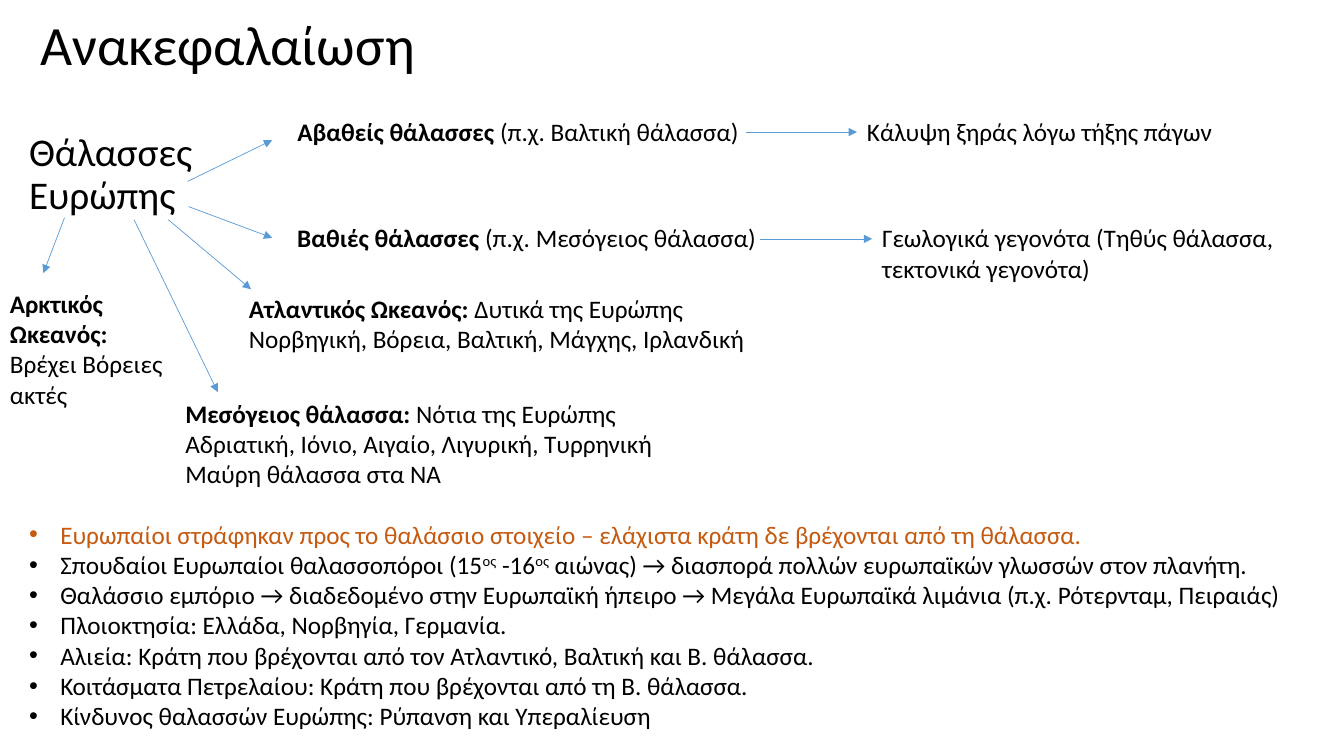
from lxml import etree
from pptx import Presentation
from pptx import util as u
from pptx.dml.color import RGBColor
from pptx.enum import shapes, text
from pptx.oxml import ns

COLORS = {"text": "000000", "accent": "C55A11", "arrow": "5B9BD5"}
FONT = "Calibri"
BULLET_INDENT = 0.31
BOLD = {"bold": True}
SUPERSCRIPT = {"baseline": 30000}
ACCENT = {"color": "accent"}

# Each label: left, top, width, height, paragraphs of (text, format) runs
LABELS = [
    (2.85, 1.1, 4.68, 0.4, [[("Αβαθείς θάλασσες ", BOLD), ("(π.χ. Βαλτική θάλασσα)", {})]]),
    (2.85, 2.16, 5.17, 0.4, [[("Βαθιές θάλασσες ", BOLD), ("(π.χ. Μεσόγειος θάλασσα)", {})]]),
    (8.5, 1.1, 4.18, 0.4, [[("Κάλυψη ξηράς λόγω τήξης πάγων", {})]]),
    (8.65, 2.16, 4.18, 0.71, [[("Γεωλογικά γεγονότα (Τηθύς θάλασσα, τεκτονικά γεγονότα)", {})]]),
    (0, 2.81, 1.86, 1.31, [[("Αρκτικός Ωκεανός: ", BOLD), ("Βρέχει Βόρειες ακτές", {})]]),
    (2.37, 2.86, 5.17, 0.71, [
        [("Ατλαντικός Ωκεανός:", BOLD), (" Δυτικά της Ευρώπης", {})],
        [("Νορβηγική, Βόρεια, Βαλτική, Μάγχης, Ιρλανδική", {})],
    ]),
    (1.74, 3.9, 5.17, 1.01, [
        [("Μεσόγειος θάλασσα:", BOLD), (" Νότια της Ευρώπης", {})],
        [("Αδριατική, Ιόνιο, Αιγαίο, Λιγυρική, Τυρρηνική", {})],
        [("Μαύρη θάλασσα στα ΝΑ", {})],
    ]),
]

# Each arrow: start x, start y, end x, end y
ARROWS = [
    (1.86, 1.8, 2.7, 1.39),
    (1.87, 2.05, 2.7, 2.36),
    (7.4, 1.31, 8.5, 1.31),
    (7.54, 2.37, 8.65, 2.37),
    (0.64, 2.16, 0.43, 2.71),
    (1.67, 2.18, 2.49, 2.87),
    (1.33, 2.18, 2.16, 3.89),
]

SUMMARY = [
    [("Ευρωπαίοι στράφηκαν προς το θαλάσσιο στοιχείο – ελάχιστα κράτη δε βρέχονται "
      "από τη θάλασσα.", ACCENT)],
    [("Σπουδαίοι Ευρωπαίοι θαλασσοπόροι (15", {}), ("ος", SUPERSCRIPT), (" -16", {}),
     ("ος", SUPERSCRIPT),
     (" αιώνας) → διασπορά πολλών ευρωπαϊκών γλωσσών στον πλανήτη.", {})],
    [("Θαλάσσιο εμπόριο → διαδεδομένο στην Ευρωπαϊκή ήπειρο → Μεγάλα Ευρωπαϊκά λιμάνια "
      "(π.χ. Ρότερνταμ, Πειραιάς)", {})],
    [("Πλοιοκτησία: Ελλάδα, Νορβηγία, Γερμανία.", {})],
    [("Αλιεία: Κράτη που βρέχονται από τον Ατλαντικό, Βαλτική και Β. θάλασσα.", {})],
    [("Κοιτάσματα Πετρελαίου: Κράτη που βρέχονται από τη Β. θάλασσα.", {})],
    [("Κίνδυνος θαλασσών Ευρώπης: Ρύπανση και Υπεραλίευση", {})],
]


def add_run(paragraph, words, size, formats):
    run = paragraph.add_run()
    run.text = words
    values = {"name": FONT, "size": u.Pt(size), "bold": formats.get("bold", False)}
    for name, value in values.items():
        setattr(run.font, name, value)
    run.font.color.rgb = RGBColor.from_string(COLORS[formats.get("color", "text")])
    if "baseline" in formats:
        run._r.get_or_add_rPr().set("baseline", str(formats["baseline"]))


def add_bullet(paragraph):
    properties = paragraph._p.get_or_add_pPr()
    properties.set("marL", str(u.Inches(BULLET_INDENT)))
    properties.set("indent", str(-u.Inches(BULLET_INDENT)))
    etree.SubElement(properties, ns.qn("a:buFont")).set("typeface", "Arial")
    etree.SubElement(properties, ns.qn("a:buChar")).set("char", "•")


def add_text(slide, left, top, width, height, paragraphs, size=18, bullets=False,
             line_spacing=1.0, anchor=text.MSO_ANCHOR.TOP):
    box = slide.shapes.add_textbox(*map(u.Inches, (left, top, width, height)))
    frame = box.text_frame
    frame.word_wrap = True
    frame.vertical_anchor = anchor
    for index, runs in enumerate(paragraphs):
        paragraph = frame.add_paragraph() if index else frame.paragraphs[0]
        paragraph.line_spacing = line_spacing
        if bullets:
            add_bullet(paragraph)
        for words, formats in runs:
            if formats.get("new_line"):
                paragraph.add_line_break()
            add_run(paragraph, words, size, formats)


def add_arrow(slide, *ends):
    arrow = slide.shapes.add_connector(shapes.MSO_CONNECTOR.STRAIGHT, *map(u.Inches, ends))
    arrow.line.color.rgb = RGBColor.from_string(COLORS["arrow"])
    arrow.line.width = u.Pt(0.5)
    etree.SubElement(arrow.line._get_or_add_ln(), ns.qn("a:tailEnd")).set("type", "triangle")
    etree.SubElement(arrow._element.spPr, ns.qn("a:effectLst"))


def main():
    presentation = Presentation()
    presentation.slide_width = u.Inches(13.33)
    presentation.slide_height = u.Inches(7.5)
    slide = presentation.slides.add_slide(presentation.slide_layouts[6])

    add_text(slide, 0.3, 0.29, 11.5, 0.37, [[("Ανακεφαλαίωση", {})]], size=39.6,
             line_spacing=0.9, anchor=text.MSO_ANCHOR.MIDDLE)
    add_text(slide, 0.19, 1.27, 1.87, 1.23,
             [[("Θάλασσες", {}), ("Ευρώπης", {"new_line": True})]],
             size=28, line_spacing=0.9)
    for arrow in ARROWS:
        add_arrow(slide, *arrow)
    for label in LABELS:
        add_text(slide, *label)
    add_text(slide, 0.19, 5.1, 12.95, 2.22, SUMMARY, bullets=True)

    presentation.save("out.pptx")


if __name__ == "__main__":
    main()
